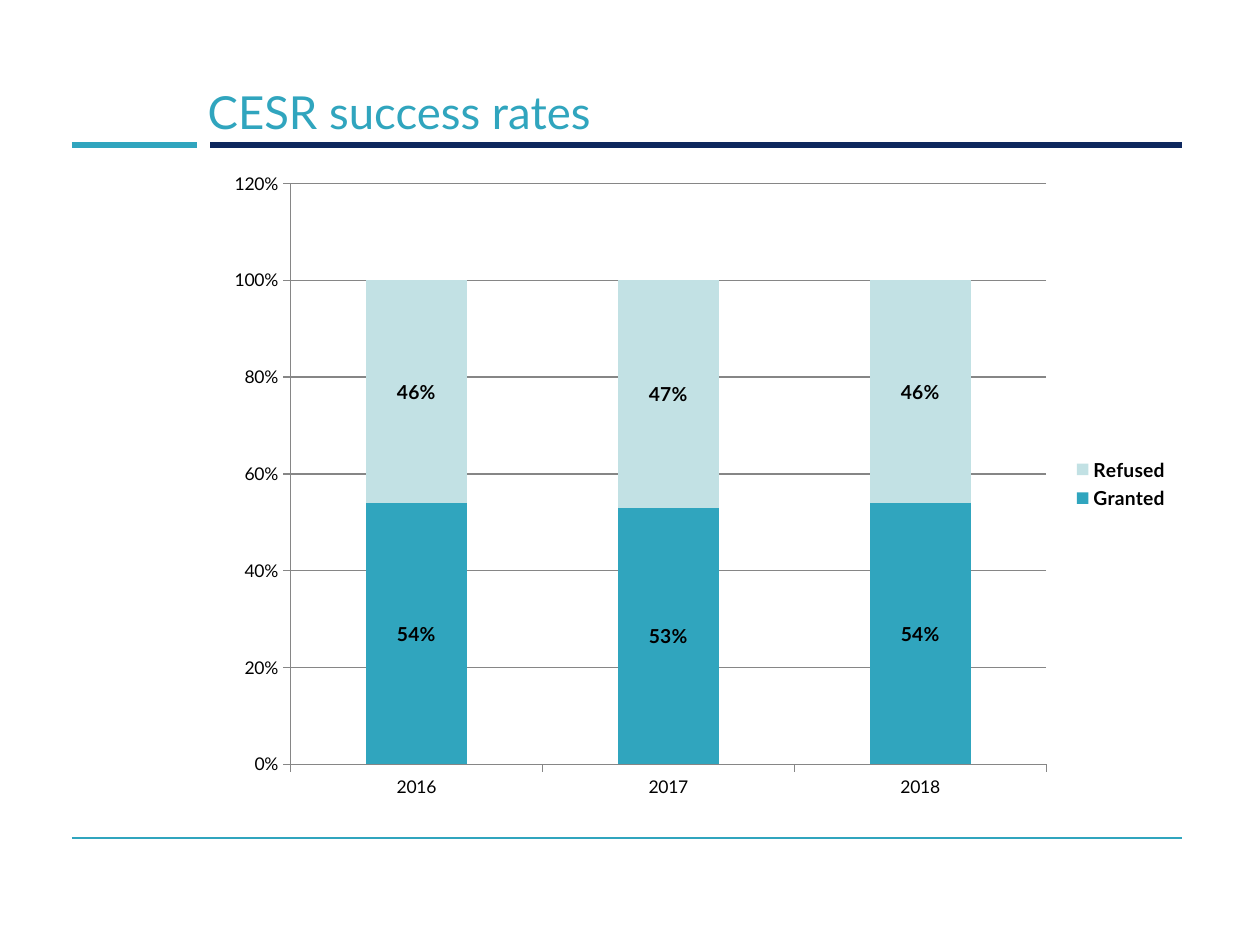
"""Build the slide on CESR success rates."""
from dataclasses import dataclass

from lxml.etree import SubElement
from pptx import Presentation
from pptx.chart.data import CategoryChartData
from pptx.dml.color import RGBColor
from pptx.enum.chart import XL_CHART_TYPE, XL_LEGEND_POSITION, XL_TICK_MARK
from pptx.enum.shapes import MSO_CONNECTOR
from pptx.enum.text import MSO_ANCHOR
from pptx.oxml.ns import qn
from pptx.util import Inches, Pt


@dataclass(frozen=True)
class Theme:
    """Colours, font and type sizes of the slide."""
    teal: RGBColor = RGBColor(0x30, 0xA5, 0xBE)
    pale: RGBColor = RGBColor(0xC2, 0xE1, 0xE4)
    navy: RGBColor = RGBColor(0x0E, 0x28, 0x5E)
    grey: RGBColor = RGBColor(0x86, 0x86, 0x86)
    black: RGBColor = RGBColor(0, 0, 0)
    font: str = "Lato"
    title_size: Pt = Pt(26)
    axis_size: Pt = Pt(10)
    label_size: Pt = Pt(11)


THEME = Theme()
YEARS = ("2016", "2017", "2018")
OUTCOMES = (
    ("Granted", (0.54, 0.53, 0.54), THEME.teal),
    ("Refused", (0.46, 0.47, 0.46), THEME.pale),
)
PLOT_AREA = {"x": 0.08, "y": 0.04, "w": 0.78, "h": 0.89}


def style_font(font, size, color, bold=False):
    """Apply the theme font with a size, colour and weight."""
    font.name = THEME.font
    font.size = size
    font.bold = bold
    font.color.rgb = color


def add_rule(slide, left, right, top, color, weight):
    """Draw a horizontal rule without a shadow."""
    rule = slide.shapes.add_connector(
        MSO_CONNECTOR.STRAIGHT, Inches(left), Inches(top), Inches(right), Inches(top))
    rule.line.color.rgb = color
    rule.line.width = Pt(weight)
    SubElement(rule._element.spPr, qn("a:effectLst"))


def add_title(slide, wording):
    """Write the slide title above the rules."""
    title = slide.shapes.add_textbox(
        Inches(1.55), Inches(0.52), Inches(7.83), Inches(0.73))
    frame = title.text_frame
    frame.word_wrap = True
    frame.vertical_anchor = MSO_ANCHOR.MIDDLE
    frame.text = wording
    style_font(frame.paragraphs[0].runs[0].font, THEME.title_size, THEME.teal)


def place_plot(chart):
    """Fix the inner plot area as fractions of the chart."""
    plot_area = chart._chartSpace.chart.plotArea
    layout = plot_area.find(qn("c:layout"))
    if layout is None:
        layout = SubElement(plot_area, qn("c:layout"))
        plot_area.insert(0, layout)
    manual = SubElement(layout, qn("c:manualLayout"))
    settings = {"layoutTarget": "inner", "xMode": "edge", "yMode": "edge", **PLOT_AREA}
    for name, setting in settings.items():
        SubElement(manual, qn(f"c:{name}")).set("val", str(setting))


def style_axes(chart):
    """Format both axes and the percentage gridlines."""
    for axis in (chart.category_axis, chart.value_axis):
        axis.major_tick_mark = XL_TICK_MARK.OUTSIDE
        axis.minor_tick_mark = XL_TICK_MARK.NONE
        axis.format.line.color.rgb = THEME.grey
        axis.format.line.width = Pt(0.75)
    rates = chart.value_axis
    rates.minimum_scale, rates.maximum_scale, rates.major_unit = 0, 1.2, 0.2
    rates.tick_labels.number_format = "0%"
    rates.tick_labels.number_format_is_linked = False
    rates.has_major_gridlines = True
    rates.major_gridlines.format.line.color.rgb = THEME.grey
    rates.major_gridlines.format.line.width = Pt(0.75)


def style_series(series, color):
    """Fill a series and label its values."""
    series.format.fill.solid()
    series.format.fill.fore_color.rgb = color
    labels = series.data_labels
    labels.show_value = True
    labels.number_format = "0%"
    labels.number_format_is_linked = False
    style_font(labels.font, THEME.label_size, THEME.black, bold=True)


def add_rates_chart(slide):
    """Add the stacked columns of granted and refused shares."""
    rates = CategoryChartData(number_format="0%")
    rates.categories = YEARS
    for name, shares, _ in OUTCOMES:
        rates.add_series(name, shares)
    chart = slide.shapes.add_chart(
        XL_CHART_TYPE.COLUMN_STACKED, Inches(1.69), Inches(1.25),
        Inches(7.69), Inches(5.18), rates).chart
    style_font(chart.font, THEME.axis_size, THEME.black)
    chart.has_title = False
    chart.has_legend = True
    chart.legend.position = XL_LEGEND_POSITION.RIGHT
    chart.legend.include_in_layout = False
    style_font(chart.legend.font, THEME.label_size, THEME.black, bold=True)
    columns = chart.plots[0]
    columns.gap_width = 150
    columns.overlap = 100
    columns.vary_by_categories = False
    for series, (_, _, color) in zip(columns.series, OUTCOMES):
        style_series(series, color)
    style_axes(chart)
    place_plot(chart)


def main():
    """Build and save the slide."""
    deck = Presentation()
    deck.slide_width, deck.slide_height = Inches(10), Inches(7.5)
    slide = deck.slides.add_slide(deck.slide_layouts[6])
    add_rule(slide, 1.67, 9.38, 1.15, THEME.navy, 3)
    add_rule(slide, 0.57, 1.56, 1.15, THEME.teal, 3)
    add_rule(slide, 0.57, 9.38, 6.65, THEME.teal, 0.75)
    add_title(slide, "CESR success rates")
    add_rates_chart(slide)
    deck.save("out.pptx")


if __name__ == "__main__":
    main()
